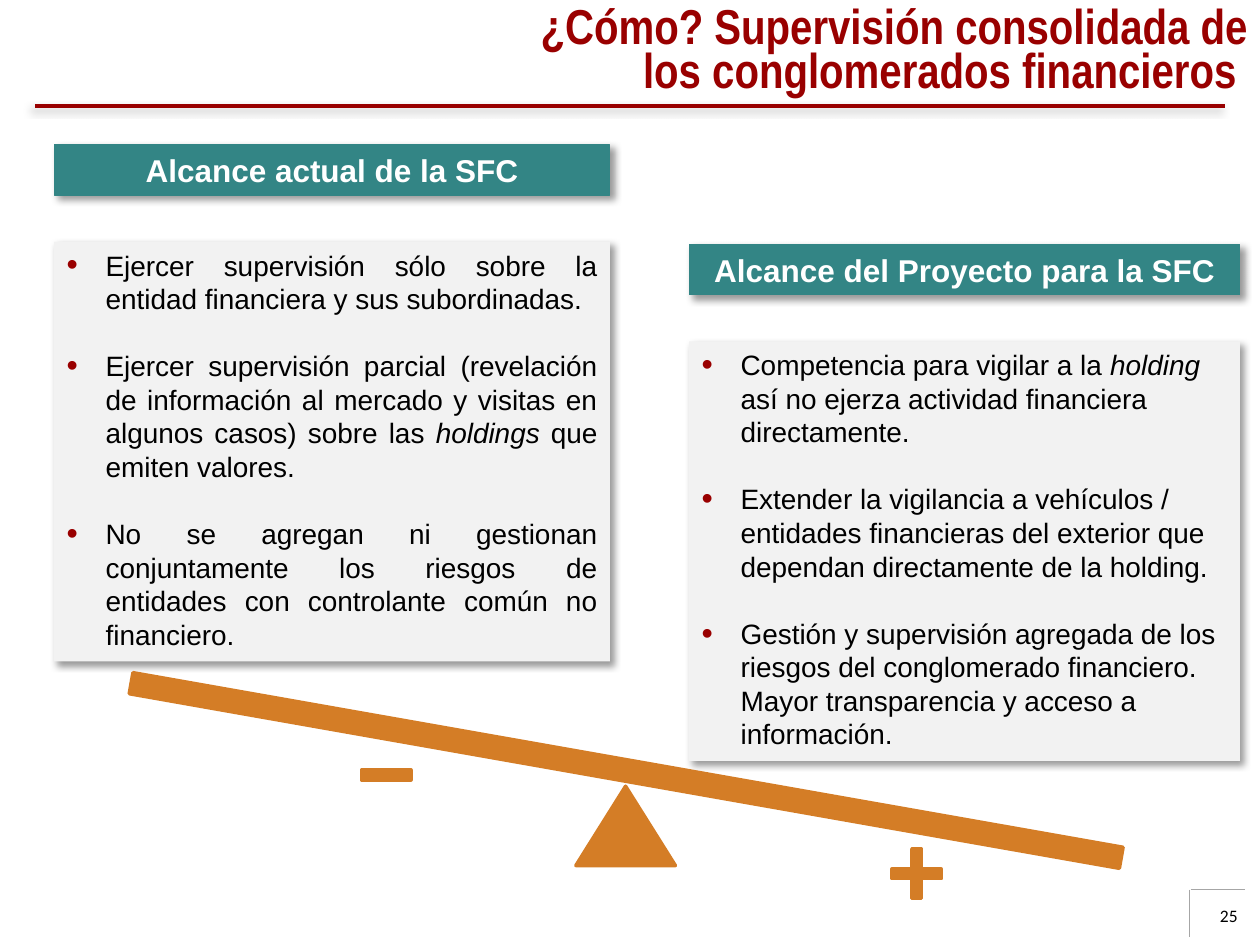
from dataclasses import dataclass

from lxml.etree import SubElement
from pptx import Presentation
from pptx.dml.color import RGBColor
from pptx.enum.shapes import MSO_CONNECTOR, MSO_SHAPE
from pptx.enum.text import MSO_ANCHOR, MSO_AUTO_SIZE, PP_ALIGN
from pptx.oxml.ns import qn
from pptx.util import Inches, Pt


@dataclass(frozen=True)
class Theme:
    red: str = "990000"
    teal: str = "338585"
    orange: str = "D47D26"
    panel: str = "F2F2F2"
    gray: str = "A6A6A6"
    black: str = "000000"
    white: str = "FFFFFF"
    font: str = "Arial"
    title_font: str = "Arial Narrow"
    number_font: str = "Calibri"
    title_size: float = 28
    header_size: float = 18
    body_size: float = 16
    body_leading: float = 19.2
    number_size: float = 10


def rgb(value):
    return RGBColor.from_string(value)


def add_text(p, text, *, font, size, color, bold=False, align=PP_ALIGN.LEFT):
    """Fill a paragraph; parts between asterisks become italic."""
    p.alignment = align
    for i, part in enumerate(text.split("*")):
        r = p.add_run()
        r.text = part
        r.font.name, r.font.size, r.font.bold = font, Pt(size), bold
        r.font.italic = i % 2 == 1
        r.font.color.rgb = rgb(color)


def set_indent(p, indent):
    """Hang the first line of a paragraph by the given length."""
    pPr = p._p.get_or_add_pPr()
    pPr.set("marL", str(indent))
    pPr.set("indent", str(-indent))
    return pPr


def add_bullet(p, color):
    pPr = set_indent(p, Inches(0.31))
    SubElement(SubElement(pPr, qn("a:buClr")), qn("a:srgbClr"), val=color)
    SubElement(pPr, qn("a:buSzPct"), val="115000")
    SubElement(pPr, qn("a:buFont"), typeface="Arial")
    SubElement(pPr, qn("a:buChar"), char="•")


def add_shadow(effects, angle):
    shadow = SubElement(effects, qn("a:outerShdw"), blurRad=str(Pt(4)), dist=str(Pt(3)),
                        dir=str(angle * 60000), algn="tl", rotWithShape="0")
    color = SubElement(shadow, qn("a:srgbClr"), val="000000")
    SubElement(color, qn("a:alpha"), val="40000")


class SlideBuilder:
    def __init__(self, prs, theme):
        self.theme = theme
        self.s = prs.slides.add_slide(prs.slide_layouts[5])

    def title(self, text, x, y, w, h):
        t, sp = self.theme, self.s.shapes.title
        sp.left, sp.top, sp.width, sp.height = map(Inches, (x, y, w, h))
        tf = sp.text_frame
        tf.auto_size, tf.vertical_anchor = MSO_AUTO_SIZE.NONE, MSO_ANCHOR.TOP
        p = tf.paragraphs[0]
        set_indent(p, Inches(0.56))
        p.line_spacing = 0.75
        add_text(p, text, font=t.title_font, size=t.title_size, color=t.red,
                 bold=True, align=PP_ALIGN.RIGHT)

    def line(self, x1, y1, x2, y2, color, width, shadow_angle=None):
        ln = self.s.shapes.add_connector(MSO_CONNECTOR.STRAIGHT, *map(Inches, (x1, y1, x2, y2)))
        ln.line.color.rgb, ln.line.width = rgb(color), Pt(width)
        effects = SubElement(ln._element.spPr, qn("a:effectLst"))
        if shadow_angle is not None:
            add_shadow(effects, shadow_angle)

    def shape(self, kind, x, y, w, h, fill, line_width=0, shadow=False):
        sp = self.s.shapes.add_shape(kind, *map(Inches, (x, y, w, h)))
        sp.fill.solid()
        sp.fill.fore_color.rgb = rgb(fill)
        if line_width:
            sp.line.color.rgb, sp.line.width = rgb(fill), Pt(line_width)
            SubElement(sp.line._get_or_add_ln(), qn("a:round"))
        else:
            sp.line.fill.background()
        sp.shadow.inherit = False
        if shadow:
            add_shadow(sp._element.spPr.find(qn("a:effectLst")), 45)
        return sp

    def header(self, text, x, y, w):
        t = self.theme
        sp = self.shape(MSO_SHAPE.RECTANGLE, x, y, w, 0.4, t.teal, 0.75, shadow=True)
        add_text(sp.text_frame.paragraphs[0], text, font=t.font, size=t.header_size,
                 color=t.white, bold=True, align=PP_ALIGN.CENTER)

    def panel(self, items, x, y, w, align):
        t = self.theme
        sp = self.shape(MSO_SHAPE.RECTANGLE, x, y, w, 3.33, t.panel, shadow=True)
        tf = sp.text_frame
        tf.vertical_anchor = MSO_ANCHOR.TOP
        for i, item in enumerate(items):
            p = tf.add_paragraph() if i else tf.paragraphs[0]
            add_bullet(p, t.red)
            p.line_spacing = Pt(t.body_leading)
            if i:
                p.space_before = Pt(t.body_leading)
            add_text(p, item, font=t.font, size=t.body_size, color=t.black, align=align)

    def page_number(self, text, x, y, w, h):
        t = self.theme
        tf = self.s.shapes.add_textbox(*map(Inches, (x, y, w, h))).text_frame
        tf.word_wrap = True
        add_text(tf.paragraphs[0], text, font=t.number_font, size=t.number_size,
                 color=t.black, align=PP_ALIGN.RIGHT)

    def seesaw(self):
        color = self.theme.orange
        beam = self.shape(MSO_SHAPE.RECTANGLE, 0.98, 6.03, 7.98, 0.17, color, 2)
        beam.rotation = 10
        self.shape(MSO_SHAPE.ISOSCELES_TRIANGLE, 4.57, 6.24, 0.79, 0.63, color, 2)
        plus = self.shape(MSO_SHAPE.CROSS, 7.08, 6.74, 0.39, 0.39, color, 2)
        plus.adjustments[0] = 0.4
        self.shape(MSO_SHAPE.RECTANGLE, 2.87, 6.11, 0.39, 0.08, color, 2)


COLUMNS = [
    (0.43, 1.15, 4.41, PP_ALIGN.JUSTIFY, "Alcance actual de la SFC", [
        "Ejercer supervisión sólo sobre la entidad financiera y sus subordinadas.",
        "Ejercer supervisión parcial (revelación de información al mercado y visitas en "
        "algunos casos) sobre las *holdings* que emiten valores.",
        "No se agregan ni gestionan conjuntamente los riesgos de entidades con "
        "controlante común no financiero.",
    ]),
    (5.47, 1.94, 4.37, PP_ALIGN.LEFT, "Alcance del Proyecto para la SFC", [
        "Competencia para vigilar a la *holding* así no ejerza actividad financiera "
        "directamente.",
        "Extender la vigilancia a vehículos / entidades financieras del exterior que "
        "dependan directamente de la holding.",
        "Gestión y supervisión agregada de los riesgos del conglomerado financiero. "
        "Mayor transparencia y acceso a información.",
    ]),
]
PANEL_OFFSET = 0.77


def main():
    prs = Presentation()
    prs.slide_width, prs.slide_height = Inches(10), Inches(7.5)
    theme = Theme()
    b = SlideBuilder(prs, theme)
    b.line(0.28, 0.84, 9.72, 0.84, theme.red, 2, shadow_angle=135)
    b.line(9.45, 7.06, 9.88, 7.06, theme.gray, 0.25)
    b.line(9.44, 7.06, 9.44, 7.44, theme.gray, 0.25)
    b.page_number("25", 9.3, 7.13, 0.62, 0.4)
    b.title("¿Cómo? Supervisión consolidada de los conglomerados financieros ",
            3.66, 0.02, 6.34, 0.81)
    for x, y, w, align, heading, items in COLUMNS:
        b.panel(items, x, y + PANEL_OFFSET, w, align)
        b.header(heading, x, y, w)
    b.seesaw()
    prs.save("out.pptx")


if __name__ == "__main__":
    main()
